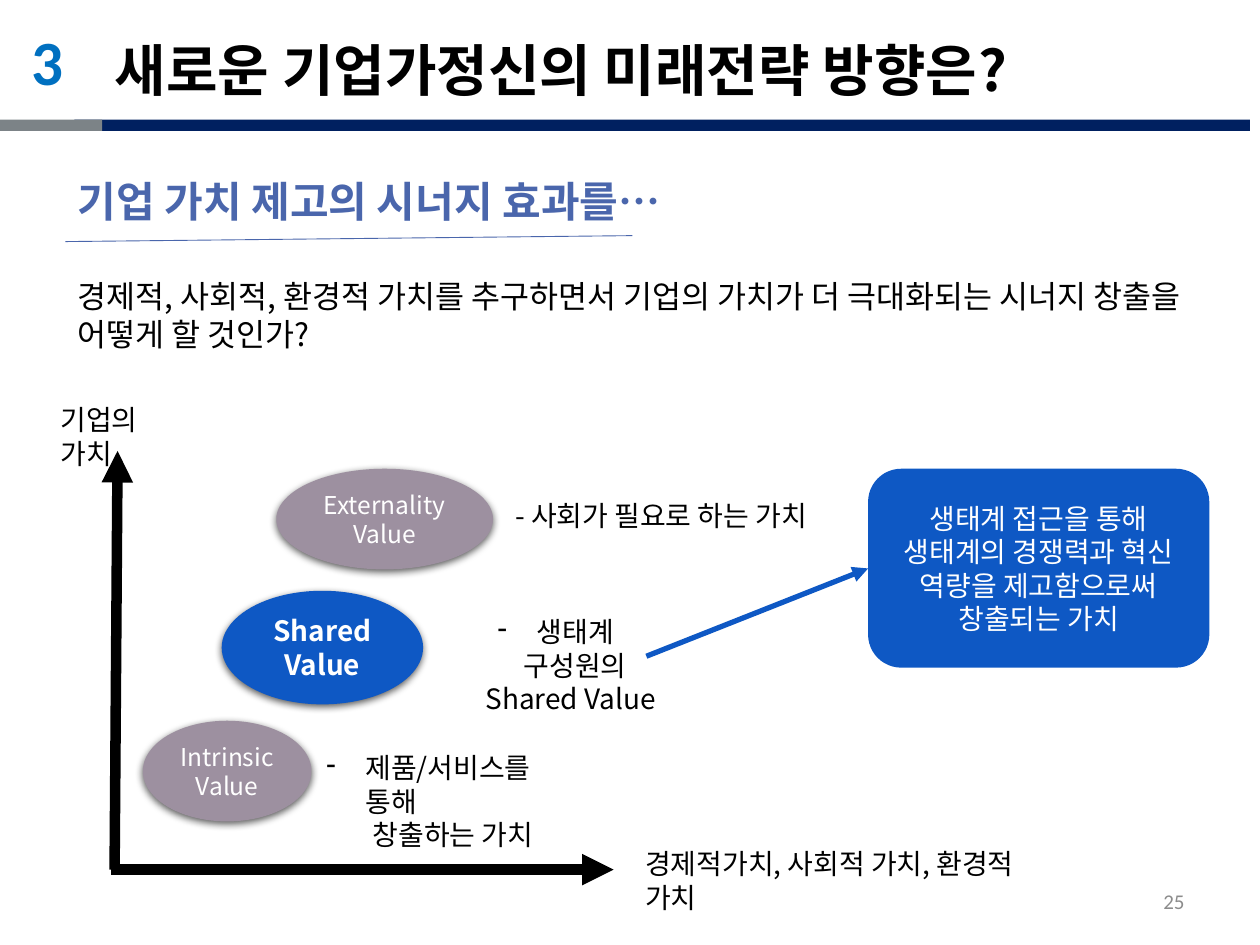
from lxml import etree
from pptx import Presentation
from pptx import util as u
from pptx.dml.color import RGBColor
from pptx.enum import shapes, text
from pptx.oxml.ns import qn

NOTO, LATIN = "Noto Sans CJK KR", "Calibri"
BLUE, MAUVE, INK, WHITE = "0E58C4", "9D90A0", "000000", "FFFFFF"
LEFT, MID, RIGHT = text.PP_ALIGN.LEFT, text.PP_ALIGN.CENTER, text.PP_ALIGN.RIGHT
TOP, HALF = text.MSO_ANCHOR.TOP, text.MSO_ANCHOR.MIDDLE
KIND = shapes.MSO_SHAPE


def rgb(code):
    return RGBColor.from_string(code)


def place(box, x, y, w, h):
    """Turn a spot given relative to box, in cm, into slide lengths."""
    return [u.Cm(v) for v in (box[0] + x, box[1] + y, w, h)]


def add(node, tag, **vals):
    """Append an XML child with the given attributes."""
    kid = etree.SubElement(node, qn(tag))
    for key, val in vals.items():
        kid.set(key, str(val))
    return kid


def write(shape, lines, size=16, color=INK, bold=False, font=NOTO, align=LEFT,
          anchor=TOP, wrap=True, space=None, dents=(), bullet=None):
    """Fill a shape with paragraphs; dents holds their left indents in cm."""
    frame = shape.text_frame
    look = {"word_wrap": wrap, "vertical_anchor": anchor,
            "auto_size": text.MSO_AUTO_SIZE.NONE}
    for key, val in look.items():
        setattr(frame, key, val)
    frame.text = "\n".join(lines)
    for i, para in enumerate(frame.paragraphs):
        for key, val in {"alignment": align, "line_spacing": space}.items():
            setattr(para, key, val)
        run = para.runs[0]
        for key, val in {"size": u.Pt(size), "bold": bold, "name": font}.items():
            setattr(run.font, key, val)
        run.font.color.rgb = rgb(color)
        add(run.font._element, "a:ea", typeface=font)
        if dents:
            prop = para._p.get_or_add_pPr()
            prop.set("marL", str(u.Cm(dents[i])))
            if bullet and i == 0:
                prop.set("indent", str(-u.Cm(dents[i])))
                add(prop, "a:buChar", char=bullet)


def label(slide, spot, lines, **style):
    write(slide.shapes.add_textbox(*spot), lines, **style)


def block(slide, kind, spot, fill):
    shape = slide.shapes.add_shape(kind, *spot)
    shape.shadow.inherit = False
    shape.fill.solid()
    shape.fill.fore_color.rgb = rgb(fill)
    shape.line.fill.background()
    return shape


def stroke(slide, box, start, end, color, width, head=True):
    ends = [u.Cm(box[i] + p[i]) for p in (start, end) for i in (0, 1)]
    line = slide.shapes.add_connector(shapes.MSO_CONNECTOR.STRAIGHT, *ends)
    line.line.color.rgb = rgb(color)
    line.line.width = u.Pt(width)
    if head:
        add(line.line._get_or_add_ln(), "a:tailEnd", type="triangle")
    add(line._element.spPr, "a:effectLst")


def header(slide, box):
    for x, w, fill in ((1.5, 23.7, "002060"), (0, 2.06, "7C8387")):
        block(slide, KIND.RECTANGLE, place(box, x, 2.41, w, 0.23), fill)
    title = slide.shapes.title
    spot = place(box, 2.06, 0.58, 18.29, 1.63)
    for key, val in zip(("left", "top", "width", "height"), spot):
        setattr(title, key, val)
    write(title, ["새로운 기업가정신의 미래전략 방향은?"], size=32, bold=True,
          wrap=False)
    label(slide, place(box, 0.38, 0.33, 1.17, 3.33), ["3"], size=36, bold=True,
          color="0070C0", font=LATIN, wrap=False)


def lead(slide, box):
    """Subheading, its rule and the question below."""
    label(slide, place(box, 0, 0, 22.86, 1.24),
          ["기업 가치 제고의 시너지 효과를…"], size=24, bold=True,
          color="4A66AC", anchor=HALF, space=0.9)
    stroke(slide, box, (0, 1.37), (11.43, 1.25), "4A66AC", 0.5, head=False)
    label(slide, place(box, 0, 1.96, 23.6, 0.99),
          ["경제적, 사회적, 환경적 가치를 추구하면서 기업의 가치가 더 "
           "극대화되는 시너지 창출을 어떻게 할 것인가?"], size=18)


def axes(slide, box):
    stroke(slide, box, (1.34, 9.53), (1.4, 1.09), INK, 6)
    stroke(slide, box, (1.27, 9.53), (11.4, 9.53), INK, 6)
    label(slide, place(box, 0, 0, 3.18, 0.94), ["기업의 가치"])
    label(slide, place(box, 11.79, 8.94, 8.99, 0.94),
          ["경제적가치, 사회적 가치, 환경적 가치"])


def oval(slide, spot, lines, fill, **style):
    shape = block(slide, KIND.OVAL, spot, fill)
    glow = add(shape._element.spPr.find(qn("a:effectLst")), "a:outerShdw",
               blurRad=u.Pt(4.5), dist=u.Pt(1.5), dir=5400000, rotWithShape=0)
    add(add(glow, "a:srgbClr", val=INK), "a:alpha", val=63000)
    write(shape, lines, color=WHITE, align=MID, anchor=HALF, **style)


def levels(slide, box):
    """The three kinds of value, each with its note."""
    rows = (
        ((4.6, 1.45, 4.37, 2.03), ["Externality", "Value"], MAUVE, {"size": 14},
         (9.17, 1.93, 6.45, 0.94), ["- 사회가 필요로 하는 가치"], {}),
        ((3.5, 3.91, 4.06, 2.29), ["Shared Value"], BLUE, {"bold": True},
         (7.82, 4.27, 4.83, 1.63), ["생태계 구성원의", "Shared Value"],
         {"align": MID, "dents": (0.79, 0.6), "bullet": "-"}),
        ((1.91, 6.53, 3.4, 2.03), ["Intrinsic Value"], MAUVE, {"size": 14},
         (5.36, 7.01, 5.77, 1.63), ["제품/서비스를 통해", "창출하는 가치"],
         {"dents": (0.79, 0.94), "bullet": "-"}),
    )
    for spot, name, fill, style, side, note, form in rows:
        oval(slide, place(box, *spot), name, fill, **style)
        label(slide, place(box, *side), note, **form)


def callout(slide, box):
    card = block(slide, KIND.ROUNDED_RECTANGLE, place(box, 0, 0, 6.88, 4.01), BLUE)
    write(card, ["생태계 접근을 통해",
                 "생태계의 경쟁력과 혁신 역량을 제고함으로써 창출되는 가치"],
          color=WHITE, align=MID, anchor=HALF)
    stroke(slide, box, (-4.47, 3.78), (0, 2.01), BLUE, 3)


def main():
    deck = Presentation()
    deck.slide_width, deck.slide_height = u.Cm(25.4), u.Cm(19.05)
    slide = deck.slides.add_slide(deck.slide_layouts[5])
    header(slide, (0, 0))
    lead(slide, (1.32, 3.5))
    axes(slide, (0.97, 8))
    levels(slide, (0.97, 8))
    callout(slide, (17.5, 9.45))
    label(slide, place((18.21, 17.65), 0, 0, 5.92, 1.02), ["25"], size=12,
          color="8C8C8C", font=LATIN, align=RIGHT, anchor=HALF)
    deck.save("out.pptx")


if __name__ == "__main__":
    main()
